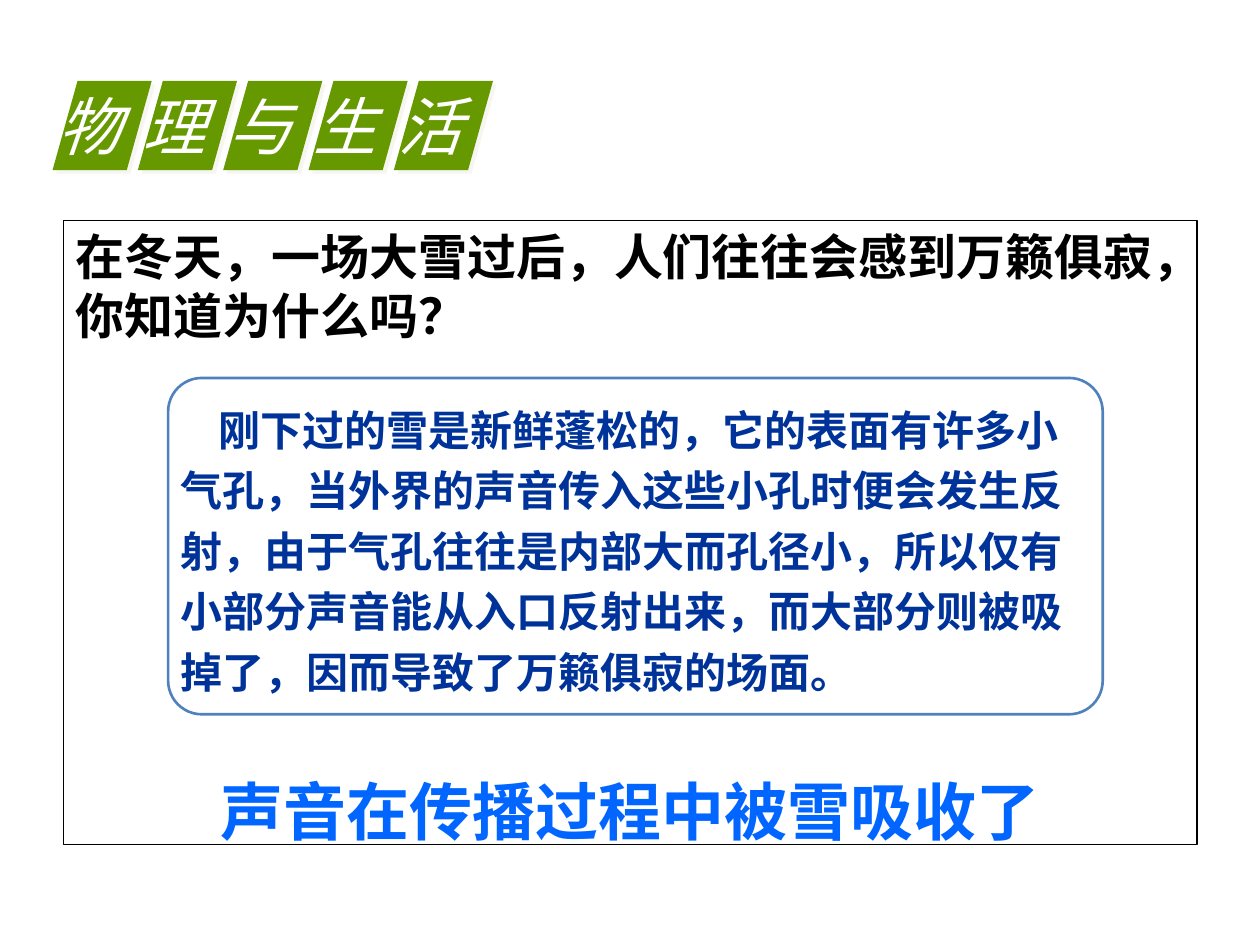
from lxml import etree
from pptx import Presentation, util as u
from pptx.dml.color import RGBColor
from pptx.enum import shapes, text
from pptx.oxml import ns

TITLE = "物理与生活"
QUESTION = "在冬天，一场大雪过后，人们往往会感到万籁俱寂，你知道为什么吗？"
EXPLANATION = (
    "刚下过的雪是新鲜蓬松的，它的表面有许多小气孔，"
    "当外界的声音传入这些小孔时便会发生反射，"
    "由于气孔往往是内部大而孔径小，所以仅有小部分声音能从入口反射出来，"
    "而大部分则被吸掉了，因而导致了万籁俱寂的场面。"
)
CONCLUSION = "声音在传播过程中被雪吸收了"

CJK, LATIN = "Noto Sans CJK SC", "Calibri"
TILE_LEFT, TILE_TOP, TILE_WIDTH, TILE_HEIGHT, TILE_STEP = 1.06, 1.63, 2, 1.8, 1.72


def color(value):
    return RGBColor.from_string(value)


def add_box(slide, kind, place, fill=None, line=None, width=0.75, adjust=None):
    shape = slide.shapes.add_shape(kind, *map(u.Cm, place))
    shape.shadow.inherit = False
    if adjust is not None:
        shape.adjustments[0] = adjust
    if fill:
        shape.fill.solid()
        shape.fill.fore_color.rgb = color(fill)
    else:
        shape.fill.background()
    if line:
        shape.line.color.rgb = color(line)
        shape.line.width = u.Pt(width)
    else:
        shape.line.fill.background()
    return shape


def write(shape, words, size, font, ink, align=text.PP_ALIGN.LEFT,
          anchor=text.MSO_ANCHOR.TOP, bold=True, italic=False, wrap=True):
    frame = shape.text_frame
    frame.word_wrap = wrap
    frame.vertical_anchor = anchor
    paragraph = frame.paragraphs[0]
    paragraph.alignment = align
    run = paragraph.add_run()
    run.text = words
    run.font.size = u.Pt(size)
    run.font.name = font
    run.font.bold = bold
    run.font.italic = italic
    run.font.color.rgb = color(ink)
    east_asian = etree.SubElement(run.font._element, ns.qn("a:ea"))
    east_asian.set("typeface", font)
    return paragraph


def indent(paragraph, margin, first_line):
    properties = paragraph._p.get_or_add_pPr()
    properties.set("marL", str(u.Cm(margin)))
    properties.set("indent", str(u.Cm(first_line)))


def add_shadow(shape, ink):
    effects = shape._element.spPr.find(ns.qn("a:effectLst"))
    shadow = etree.SubElement(effects, ns.qn("a:outerShdw"), dist=str(u.Pt(2.8)),
                              dir="2700000", algn="ctr", rotWithShape="0")
    shade = etree.SubElement(shadow, ns.qn("a:srgbClr"), val=ink)
    etree.SubElement(shade, ns.qn("a:alpha"), val="50000")


def main():
    presentation = Presentation()
    presentation.slide_width, presentation.slide_height = u.Cm(25.4), u.Cm(19.05)
    slide = presentation.slides.add_slide(presentation.slide_layouts[6])

    add_box(slide, shapes.MSO_SHAPE.ROUNDED_RECTANGLE, (3.39, 7.62, 18.84, 6.78),
            line="4F81BD", width=1.5, adjust=0.1)
    explanation = slide.shapes.add_textbox(*map(u.Cm, (3.39, 7.82, 18.84, 6.35)))
    paragraph = write(explanation, EXPLANATION, 24, CJK, "003399")
    paragraph.line_spacing = 1.2
    indent(paragraph, 0, 0.77)

    question = add_box(slide, shapes.MSO_SHAPE.RECTANGLE, (1.28, 4.45, 22.85, 12.57),
                       line="000000")
    write(question, QUESTION, 28, LATIN, "000000")

    conclusion = slide.shapes.add_textbox(*map(u.Cm, (3.2, 15.44, 19, 1.78)))
    write(conclusion, CONCLUSION, 36, LATIN, "0066FF", text.PP_ALIGN.CENTER)

    for index, character in enumerate(TITLE):
        place = (TILE_LEFT + index * TILE_STEP, TILE_TOP, TILE_WIDTH, TILE_HEIGHT)
        tile = add_box(slide, shapes.MSO_SHAPE.PARALLELOGRAM, place,
                       fill="669900", adjust=0.28)
        add_shadow(tile, "EEECE1")
        paragraph = write(tile, character, 36, CJK, "FFFFFF", text.PP_ALIGN.RIGHT,
                          text.MSO_ANCHOR.MIDDLE, bold=False, italic=True, wrap=False)
        indent(paragraph, 0.95, -0.95)

    presentation.save("out.pptx")


if __name__ == "__main__":
    main()
